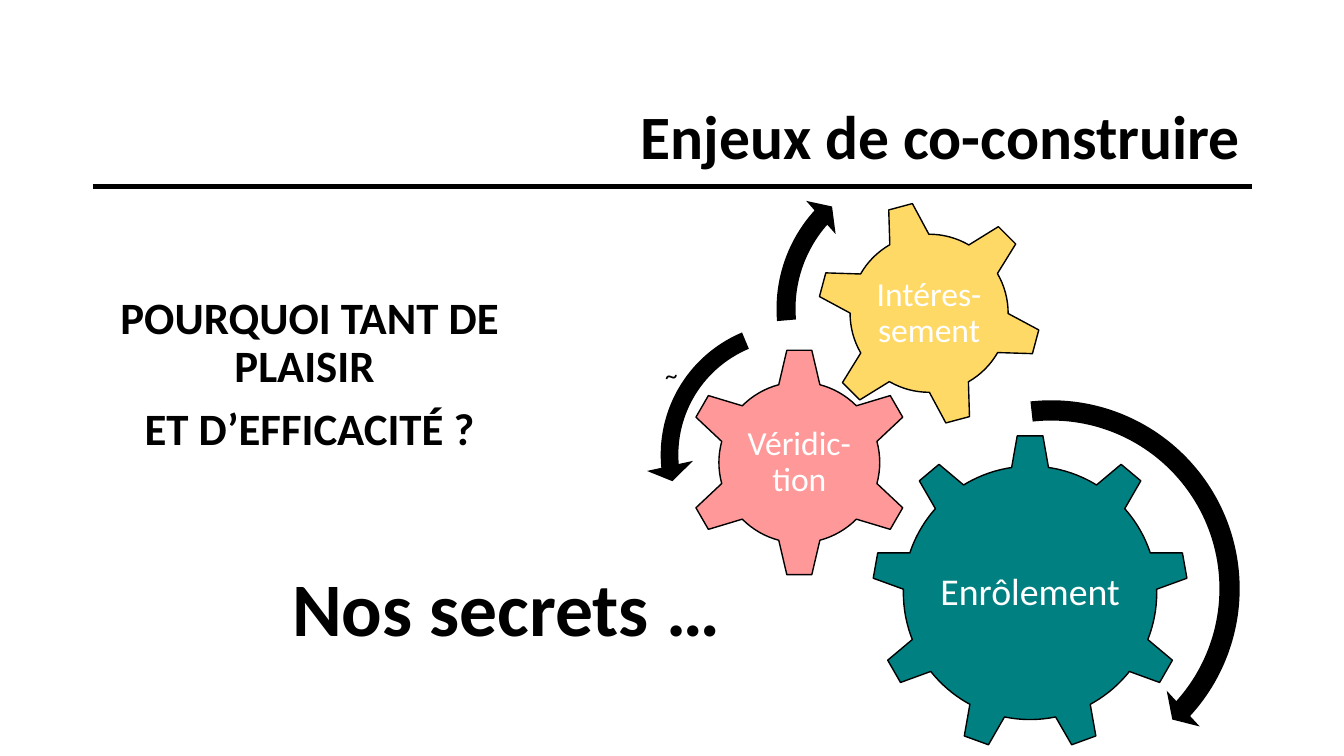
from lxml import etree
from pptx import Presentation
from pptx.dml.color import RGBColor
from pptx.enum.shapes import MSO_CONNECTOR, MSO_SHAPE
from pptx.enum.text import MSO_ANCHOR, MSO_AUTO_SIZE, PP_ALIGN
from pptx.oxml.ns import qn
from pptx.util import Cm, Pt

BLACK = RGBColor(0x00, 0x00, 0x00)
WHITE = RGBColor(0xFF, 0xFF, 0xFF)
TEAL = RGBColor(0x00, 0x80, 0x80)
PINK = RGBColor(0xFF, 0x99, 0x99)
YELLOW = RGBColor(0xFF, 0xD9, 0x66)


class SlideBuilder:
    """Holds the text style and the current slide."""

    font_name = "Calibri"
    line_spacing = 0.9

    def __init__(self, slide):
        self.slide = slide

    def fill_text(self, frame, lines, size, bold=False, color=BLACK,
                  align=PP_ALIGN.LEFT, anchor=MSO_ANCHOR.TOP, wrap=True):
        frame.word_wrap = wrap
        frame.auto_size = MSO_AUTO_SIZE.NONE
        frame.vertical_anchor = anchor
        frame.text = "\n".join(lines)
        for index, paragraph in enumerate(frame.paragraphs):
            properties = paragraph._p.get_or_add_pPr()
            properties.set("marL", "0")
            properties.set("indent", "0")
            etree.SubElement(properties, qn("a:buNone"))
            paragraph.alignment = align
            paragraph.line_spacing = self.line_spacing
            paragraph.space_before = Pt(10 if index else 0)
            font = paragraph.font
            font.name, font.size, font.bold = self.font_name, Pt(size), bold
            font.color.rgb = color

    def placeholder(self, index, left, top, width, height, lines, size, **style):
        shape = self.slide.placeholders[index]
        shape.left, shape.top = Cm(left), Cm(top)
        shape.width, shape.height = Cm(width), Cm(height)
        self.fill_text(shape.text_frame, lines, size, **style)

    def text(self, left, top, width, height, content, size, inset=None, **style):
        box = self.slide.shapes.add_textbox(Cm(left), Cm(top), Cm(width), Cm(height))
        frame = box.text_frame
        if inset is not None:
            frame.margin_left = frame.margin_right = Cm(inset)
            frame.margin_top = frame.margin_bottom = Cm(inset)
        self.fill_text(frame, [content], size, **style)

    def rule(self, left, right, y, width):
        line = self.slide.shapes.add_connector(
            MSO_CONNECTOR.STRAIGHT, Cm(left), Cm(y), Cm(right), Cm(y))
        line.line.color.rgb = BLACK
        line.line.width = Pt(width)
        etree.SubElement(line._element.spPr, qn("a:effectLst"))

    def square_shape(self, kind, left, top, side, fill):
        shape = self.slide.shapes.add_shape(kind, Cm(left), Cm(top), Cm(side), Cm(side))
        shape.shadow.inherit = False
        shape.fill.solid()
        shape.fill.fore_color.rgb = fill
        return shape

    def gear(self, kind, left, top, side, fill, label, label_size, label_width, rotation=0):
        gear = self.square_shape(kind, left, top, side, fill)
        gear.rotation = rotation
        gear.line.color.rgb = BLACK
        gear.line.width = Pt(1)
        # The label stays upright, centred on the gear
        offset = (side - label_width) / 2
        self.text(left + offset, top + offset, label_width, label_width, label,
                  label_size, inset=0.08, color=WHITE, align=PP_ALIGN.CENTER,
                  anchor=MSO_ANCHOR.MIDDLE)

    def turn_arrow(self, kind, left, top, side, adjustments):
        arrow = self.square_shape(kind, left, top, side, BLACK)
        arrow.line.fill.background()
        for index, value in enumerate(adjustments):
            arrow.adjustments[index] = value


def main():
    presentation = Presentation()
    presentation.slide_width, presentation.slide_height = Cm(33.87), Cm(19.05)
    builder = SlideBuilder(presentation.slides.add_slide(presentation.slide_layouts[1]))

    # Title, question and rule
    builder.placeholder(0, 4.88, 1.68, 26.64, 3.68, ["Enjeux de co-construire"], 44,
                        bold=True, align=PP_ALIGN.RIGHT, anchor=MSO_ANCHOR.MIDDLE)
    builder.placeholder(1, 1.85, 7.32, 11.91, 4.82,
                        ["POURQUOI TANT DE PLAISIR ", "ET D’EFFICACITÉ ?"], 32,
                        bold=True, align=PP_ALIGN.CENTER)
    builder.rule(2.34, 31.55, 4.7, 3)

    # Gears
    builder.gear(MSO_SHAPE.GEAR_9, 21.97, 10.95, 7.98, TEAL, "Enrôlement", 27, 4.9)
    builder.gear(MSO_SHAPE.GEAR_6, 17.25, 8.76, 5.79, PINK, "Véridic-tion", 24, 2.87)
    builder.gear(MSO_SHAPE.GEAR_6, 20.57, 5.05, 5.69, YELLOW, "Intéres-sement", 24, 3.2,
                 rotation=345)

    # Arrows showing how each gear turns
    builder.turn_arrow(MSO_SHAPE.CIRCULAR_ARROW, 21.39, 9.73, 10.21,
                       (0.05, 2.99, 25.36, 158.19, 0.06))
    builder.turn_arrow(MSO_SHAPE.LEFT_CIRCULAR_ARROW, 16.28, 7.75, 7.42,
                       (0.06, 4.3, 104.89, 148.38, 0.08))
    builder.turn_arrow(MSO_SHAPE.CIRCULAR_ARROW, 19.25, 3.78, 8,
                       (0.06, 3.94, 133.14, 105.08, 0.07))

    # Closing words
    builder.text(16.51, 9.02, 0.84, 1.02, "~", 18, wrap=False)
    builder.text(7.11, 14.27, 11.91, 3.12, "Nos secrets …", 54, bold=True)

    presentation.save("out.pptx")


if __name__ == "__main__":
    main()
